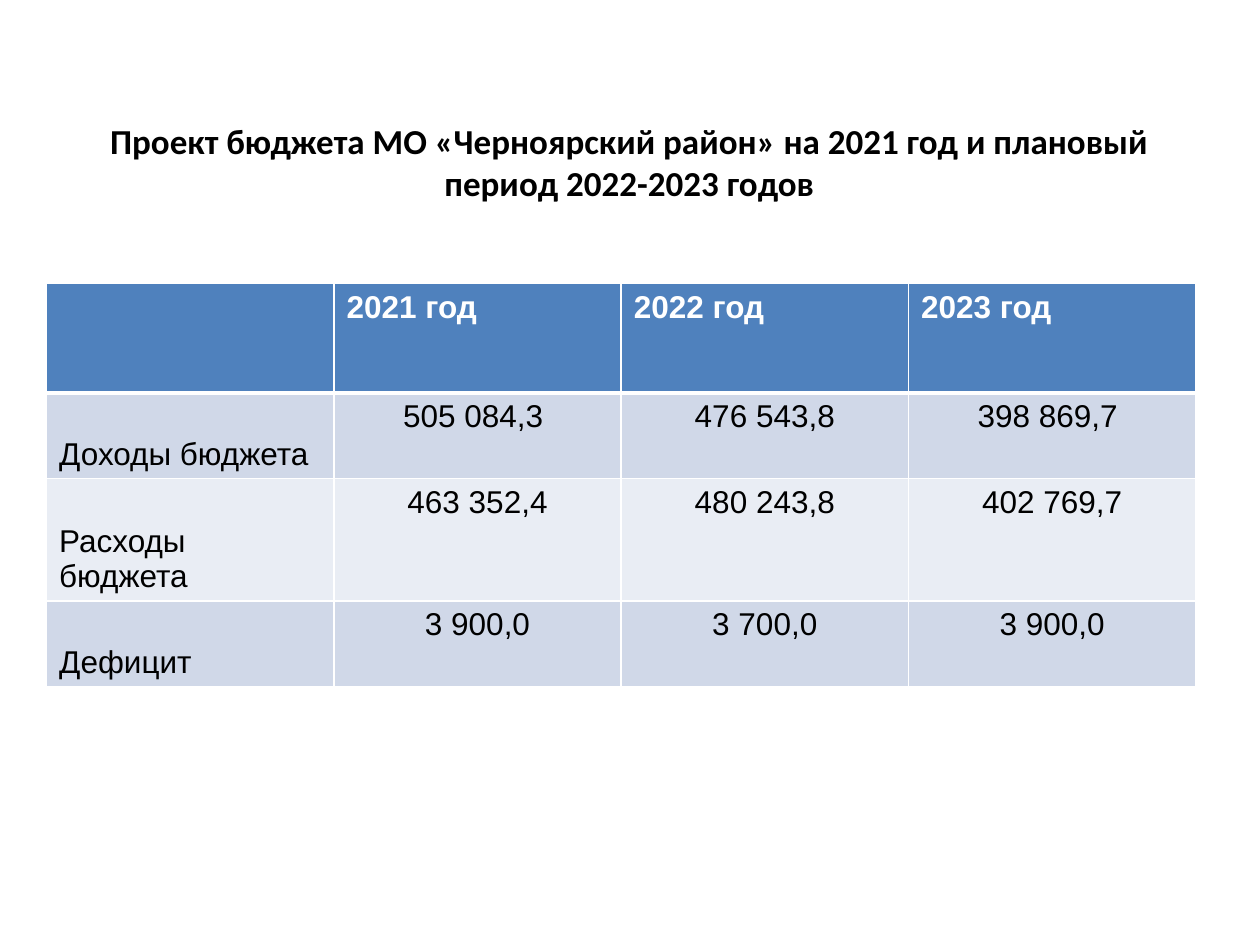
from lxml import etree
from pptx import Presentation
from pptx.dml.color import RGBColor
from pptx.enum.text import MSO_ANCHOR, MSO_AUTO_SIZE, PP_ALIGN
from pptx.oxml.ns import qn
from pptx.util import Inches, Pt

LEFT, CENTER = PP_ALIGN.LEFT, PP_ALIGN.CENTER
TOP, MIDDLE, BOTTOM = MSO_ANCHOR.TOP, MSO_ANCHOR.MIDDLE, MSO_ANCHOR.BOTTOM
NO_AUTOFIT = MSO_AUTO_SIZE.NONE

# Content
TITLE = "Проект бюджета МО «Черноярский район» на 2021 год и плановый период 2022-2023 годов"
ROWS = [
    ("", "2021 год", "2022 год", "2023 год"),
    ("Доходы бюджета", "505 084,3 ", "476 543,8", "398 869,7 "),
    ("Расходы бюджета", "463 352,4", "480 243,8", "402 769,7"),
    ("Дефицит", "3 900,0", "3 700,0", "3 900,0"),
]
ROW_HEIGHTS = (0.87, 0.68, 0.97, 0.68)
COL_WIDTH = 2.28

THEME = {
    "title_font": "Calibri", "title_size": 20,
    "table_font": "Arial", "table_size": 18,
    "text": "000000", "header_text": "FFFFFF", "header": "4F81BD",
    "bands": ("E9EDF4", "D0D8E8"), "border": "FFFFFF",
}


def write(tf, text, *, font, size, color, bold=False, align=LEFT):
    p = tf.paragraphs[0]
    p.alignment = align
    r = p.add_run()
    r.text = text
    r.font.name, r.font.size, r.font.bold = font, Pt(size), bold
    r.font.color.rgb = RGBColor.from_string(color)


def set_borders(cell, widths):
    """Draw the cell's borders; widths maps each side to points."""
    tc_pr = cell._tc.get_or_add_tcPr()
    for i, (side, width) in enumerate(widths.items()):
        ln = etree.Element(qn(f"a:ln{side}"), w=str(Pt(width)))
        fill = etree.SubElement(ln, qn("a:solidFill"))
        etree.SubElement(fill, qn("a:srgbClr"), val=THEME["border"])
        tc_pr.insert(i, ln)


prs = Presentation()
prs.slide_width, prs.slide_height = Inches(10), Inches(7.5)
s = prs.slides.add_slide(prs.slide_layouts[5])

# Title
title = s.shapes.title
title.left, title.top = Inches(0.39), Inches(0.95)
title.width, title.height = Inches(9.21), Inches(0.67)
tf = title.text_frame
tf.margin_left = tf.margin_right = tf.margin_top = tf.margin_bottom = 0
tf.word_wrap, tf.auto_size, tf.vertical_anchor = True, NO_AUTOFIT, MIDDLE
write(tf, TITLE, font=THEME["title_font"], size=THEME["title_size"],
      color=THEME["text"], bold=True, align=CENTER)

# Budget table
n_cols = len(ROWS[0])
table = s.shapes.add_table(
    len(ROWS), n_cols, Inches(0.37), Inches(2.25),
    Inches(COL_WIDTH * n_cols), Inches(sum(ROW_HEIGHTS))).table
for col in table.columns:
    col.width = Inches(COL_WIDTH)

for i, (values, height) in enumerate(zip(ROWS, ROW_HEIGHTS)):
    table.rows[i].height = Inches(height)
    header = i == 0
    for j, value in enumerate(values):
        cell = table.cell(i, j)
        label = j == 0
        cell.fill.solid()
        cell.fill.fore_color.rgb = RGBColor.from_string(
            THEME["header"] if header else THEME["bands"][i % 2])
        set_borders(cell, {"L": 1, "R": 1, "T": 3 if i == 1 else 1,
                           "B": 3 if header else 1})
        cell.vertical_anchor = BOTTOM if label else TOP
        if value:
            write(cell.text_frame, value, font=THEME["table_font"],
                  size=THEME["table_size"], bold=header,
                  color=THEME["header_text" if header else "text"],
                  align=LEFT if header or label else CENTER)

prs.save("out.pptx")
